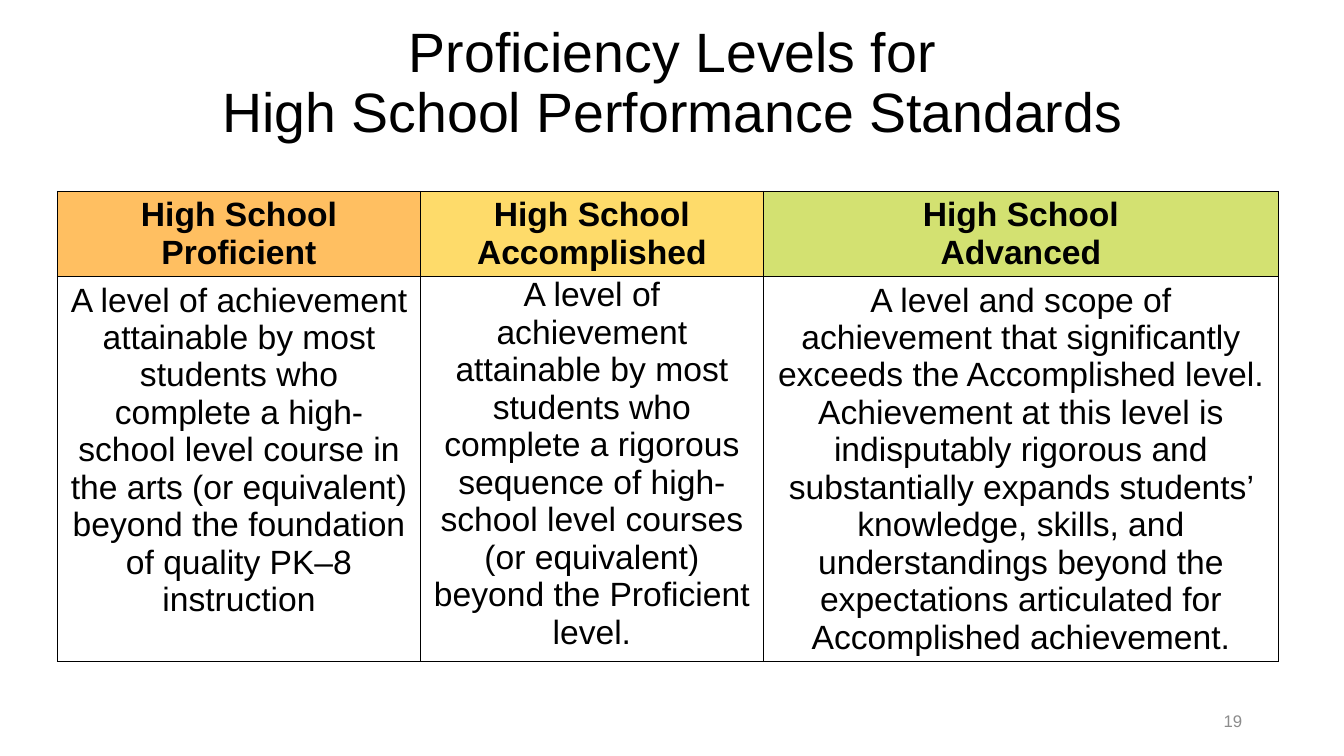
from lxml import etree
from pptx import Presentation
from pptx.dml.color import RGBColor
from pptx.enum.text import MSO_ANCHOR as Anchor, PP_ALIGN as Align
from pptx.oxml.ns import qn
from pptx.util import Inches, Pt

BLACK = RGBColor(0x00, 0x00, 0x00)
GREY = RGBColor(0x8C, 0x8C, 0x8C)
WHITE = RGBColor(0xFF, 0xFF, 0xFF)
ORANGE = RGBColor(0xFF, 0xBF, 0x61)
YELLOW = RGBColor(0xFE, 0xDB, 0x6A)
GREEN = RGBColor(0xD3, 0xE1, 0x71)

TITLE = "Proficiency Levels for\vHigh School Performance Standards"
TIGHT = {"margin_left": Inches(0.07), "margin_right": Inches(0.07),
         "margin_top": 0, "margin_bottom": 0}
# Level, header colour, column width, description, cell margins
LEVELS = [
    ("Proficient", ORANGE, 3.6,
     "A level of achievement attainable by most students who complete a "
     "high- school level course in the arts (or equivalent) beyond the "
     "foundation of quality PK–8 instruction", {}),
    ("Accomplished", YELLOW, 3.4,
     "A level of achievement attainable by most students who complete a "
     "rigorous sequence of high-school level courses (or equivalent) beyond "
     "the Proficient level.", TIGHT),
    ("Advanced", GREEN, 5.11,
     "A level and scope of achievement that significantly exceeds the "
     "Accomplished level. Achievement at this level is indisputably rigorous "
     "and substantially expands students’ knowledge, skills, and "
     "understandings beyond the expectations articulated for Accomplished "
     "achievement.", {}),
]
ROW_HEIGHTS = (0.84, 3.81)


def set_all(target, values):
    for name, value in values.items():
        setattr(target, name, value)


def write(frame, text, size, color=BLACK, bold=False, **paragraph_format):
    """Fill a text frame, one paragraph per line of text."""
    frame.text = text
    for paragraph in frame.paragraphs:
        set_all(paragraph, paragraph_format)
        for run in paragraph.runs:
            set_all(run.font, {"name": "Arial", "size": Pt(size), "bold": bold})
            run.font.color.rgb = color


def add_borders(cell):
    properties = cell._tc.get_or_add_tcPr()
    for position, side in enumerate(("a:lnL", "a:lnR", "a:lnT", "a:lnB")):
        line = etree.Element(qn(side), w=str(Pt(1)))
        fill = etree.SubElement(line, qn("a:solidFill"))
        etree.SubElement(fill, qn("a:srgbClr"), val=str(BLACK))
        properties.insert(position, line)


def add_title(slide, left, top, width, height):
    title = slide.shapes.title
    set_all(title, {"left": Inches(left), "top": Inches(top),
                    "width": Inches(width), "height": Inches(height)})
    set_all(title.text_frame, {"word_wrap": True,
                               "vertical_anchor": Anchor.MIDDLE,
                               "margin_bottom": Inches(0.62)})
    write(title.text_frame, TITLE, 39.6, alignment=Align.CENTER,
          line_spacing=0.9)


def add_levels_table(slide, left, top):
    width = sum(level[2] for level in LEVELS)
    table = slide.shapes.add_table(
        len(ROW_HEIGHTS), len(LEVELS), Inches(left), Inches(top),
        Inches(width), Inches(sum(ROW_HEIGHTS))).table
    for row, height in zip(table.rows, ROW_HEIGHTS):
        row.height = Inches(height)
    for index, (level, color, column_width, description, margins) in enumerate(LEVELS):
        table.columns[index].width = Inches(column_width)
        header, body = table.cell(0, index), table.cell(1, index)
        write(header.text_frame, f"High School\n{level}", 24, bold=True,
              alignment=Align.CENTER)
        write(body.text_frame, description, 24, alignment=Align.CENTER)
        set_all(body, margins)
        for cell, fill_color in ((header, color), (body, WHITE)):
            cell.fill.solid()
            cell.fill.fore_color.rgb = fill_color
            add_borders(cell)


def add_page_number(slide, left, top, width, height):
    frame = slide.shapes.add_textbox(
        Inches(left), Inches(top), Inches(width), Inches(height)).text_frame
    set_all(frame, {"word_wrap": True, "vertical_anchor": Anchor.MIDDLE})
    write(frame, "19", 12, GREY, alignment=Align.RIGHT)


def main():
    deck = Presentation()
    set_all(deck, {"slide_width": Inches(13.33), "slide_height": Inches(7.5)})
    slide = deck.slides.add_slide(deck.slide_layouts[5])
    add_title(slide, 0.92, 0.4, 11.5, 1.45)
    add_levels_table(slide, 0.57, 1.9)
    add_page_number(slide, 9.42, 6.95, 3, 0.4)
    deck.save("out.pptx")


if __name__ == "__main__":
    main()
